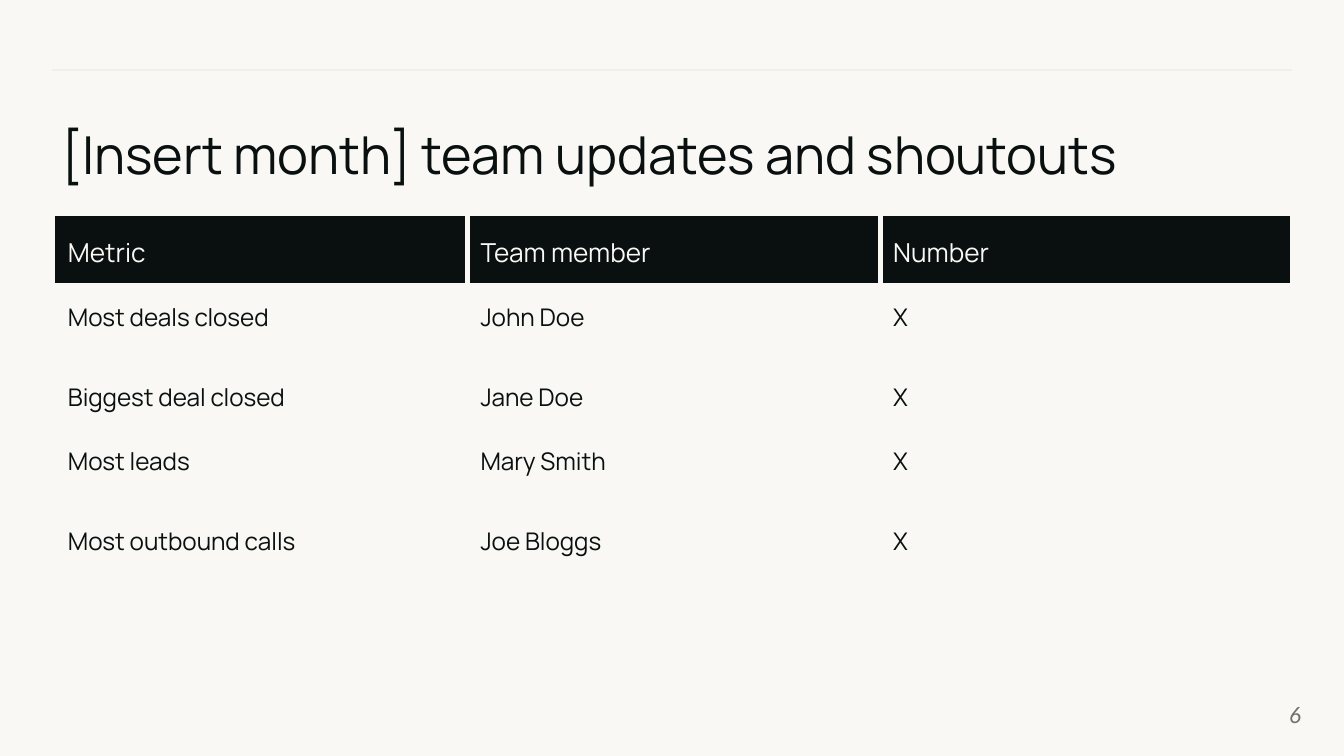
from lxml.etree import SubElement
from pptx import Presentation
from pptx.dml.color import RGBColor
from pptx.enum.shapes import MSO_CONNECTOR
from pptx.enum.text import MSO_ANCHOR, MSO_AUTO_SIZE, PP_ALIGN
from pptx.oxml.ns import qn
from pptx.util import Emu, Pt

INK, PAPER, RULE, GREY = "09100F", "F9F8F5", "EFEFEF", "6C706F"
HEAD = ["Metric", "Team member", "Number"]
ROWS = [
    ["Most deals closed", "John Doe", "X"],
    ["Biggest deal closed", "Jane Doe", "X"],
    ["Most leads", "Mary Smith", "X"],
    ["Most outbound calls", "Joe Bloggs", "X"],
]
HIGH = [52, 80, 50, 80, 80]


def px(size):
    return Emu(int(size * 914400 / 134.4))


def tint(code):
    return RGBColor.from_string(code)


def write(frame, text, size, color, font="Manrope", align=PP_ALIGN.LEFT,
          slant=False, space=1.0, after=0):
    para = frame.paragraphs[0]
    para.alignment = align
    para.line_spacing = space
    para.space_after = Pt(after)
    run = para.add_run()
    run.text = text
    run.font.size = Pt(size)
    run.font.name = font
    run.font.italic = slant
    run.font.color.rgb = tint(color)


def fit(frame, anchor):
    frame.margin_left = frame.margin_right = 0
    frame.margin_top = frame.margin_bottom = 0
    frame.word_wrap = True
    frame.auto_size = MSO_AUTO_SIZE.NONE
    frame.vertical_anchor = anchor


def add_rule(slide, x, y, wide):
    line = slide.shapes.add_connector(
        MSO_CONNECTOR.STRAIGHT, px(x), px(y), px(x + wide), px(y))
    line.line.color.rgb = tint(RULE)
    line.line.width = Pt(0.75)
    SubElement(line._element.spPr, qn("a:effectLst"))


def add_title(slide, x, y, wide, high):
    title = slide.shapes.title
    title.left, title.top = px(x), px(y)
    title.width, title.height = px(wide), px(high)
    fit(title.text_frame, MSO_ANCHOR.TOP)
    write(title.text_frame, "[Insert month] team updates and shoutouts",
          28, INK, after=10)


def add_edges(cell, sides):
    props = cell._tc.get_or_add_tcPr()
    for side in "LRTB":
        edge = SubElement(props, qn(f"a:ln{side}"))
        if side in sides:
            edge.set("w", str(Pt(3)))
            fill = SubElement(edge, qn("a:solidFill"))
            SubElement(fill, qn("a:srgbClr")).set("val", PAPER)
        else:
            SubElement(edge, qn("a:noFill"))


def add_cell(cell, text, row, col):
    cell.margin_left = cell.margin_right = px(13)
    cell.margin_top = cell.margin_bottom = px(13)
    if row == 0:
        add_edges(cell, "LR" if col else "R")
        cell.fill.solid()
        cell.fill.fore_color.rgb = tint(INK)
        cell.vertical_anchor = MSO_ANCHOR.MIDDLE
        write(cell.text_frame, text, 14, PAPER, space=1.15)
    else:
        add_edges(cell, "")
        cell.fill.background()
        cell.vertical_anchor = MSO_ANCHOR.TOP
        write(cell.text_frame, text, 13, INK, space=1.15, after=5)


def add_grid(slide, x, y, wide):
    data = [HEAD] + ROWS
    table = slide.shapes.add_table(
        len(data), len(HEAD), px(x), px(y), px(wide), px(sum(HIGH))).table
    table.first_row = table.horz_banding = False
    for col in table.columns:
        col.width = px(wide / len(HEAD))
    for r, texts in enumerate(data):
        table.rows[r].height = px(HIGH[r])
        for c, text in enumerate(texts):
            add_cell(table.cell(r, c), text, r, c)


def add_page(slide, x, y, wide, high):
    box = slide.shapes.add_textbox(px(x), px(y), px(wide), px(high))
    fit(box.text_frame, MSO_ANCHOR.MIDDLE)
    write(box.text_frame, "6", 12, GREY, font="Lato",
          align=PP_ALIGN.RIGHT, slant=True)


def main():
    deck = Presentation()
    deck.slide_width, deck.slide_height = px(1344), px(756)
    slide = deck.slides.add_slide(deck.slide_layouts[5])
    slide.background.fill.solid()
    slide.background.fill.fore_color.rgb = tint(PAPER)
    add_rule(slide, 52, 70, 1240)
    add_title(slide, 61, 122, 1146, 69)
    add_page(slide, 1220, 686, 81, 58)
    add_grid(slide, 55, 216, 1238)
    deck.save("out.pptx")


if __name__ == "__main__":
    main()
